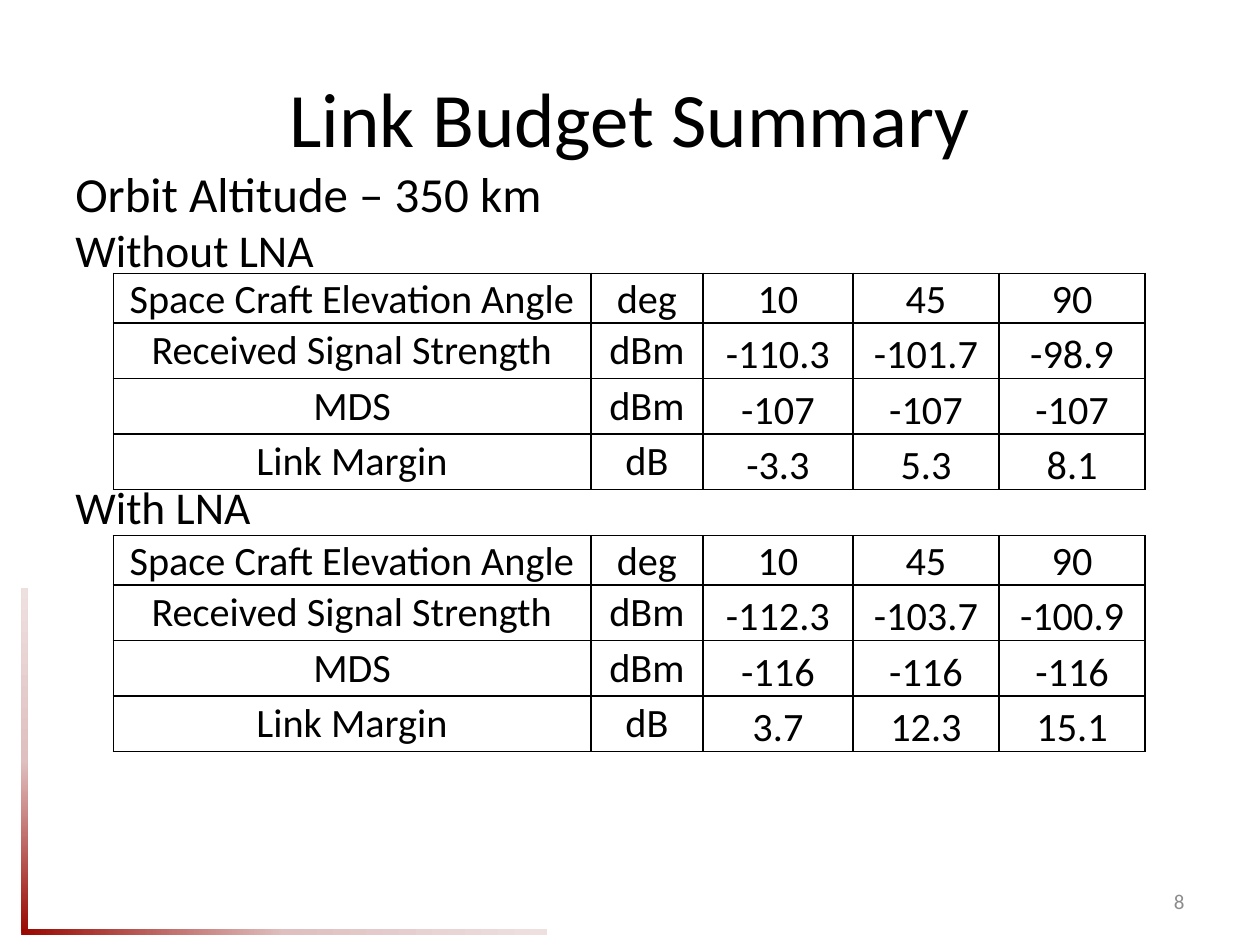
from dataclasses import dataclass

from pptx import Presentation
from pptx.dml.color import RGBColor
from pptx.enum.shapes import MSO_SHAPE
from pptx.enum.text import MSO_ANCHOR, PP_ALIGN
from pptx.oxml import parse_xml
from pptx.oxml.ns import nsdecls
from pptx.slide import Slide
from pptx.table import _Cell
from pptx.text.text import TextFrame
from pptx.util import Inches, Length, Pt


@dataclass(frozen=True)
class Theme:
    font: str = "Calibri"
    ink: str = "000000"
    muted: str = "8C8C8C"
    gradient: tuple = ((0, "990700"), (50, "DFBFBF"), (100, "EFE0E0"))
    title: int = 44
    body: int = 28
    label: int = 26
    table: int = 23
    number: int = 12
    border: int = 1


@dataclass(frozen=True)
class Box:
    """An area in columns and rows of the slide grid."""
    left: float
    top: float
    width: float
    height: float

    def lengths(self) -> tuple:
        return tuple(map(grid, (self.left, self.top, self.width, self.height)))


@dataclass(frozen=True)
class LinkBudget:
    top: float
    strength: tuple
    sensitivity: tuple
    margin: tuple

    def rows(self) -> list:
        return [
            ("Space Craft Elevation Angle", "deg", "10", "45", "90"),
            ("Received Signal Strength", "dBm", *self.strength),
            ("MDS", "dBm", *self.sensitivity),
            ("Link Margin", "dB", *self.margin),
        ]


THEME = Theme()
GRID_COLUMNS, GRID_ROWS = 40, 30
UNIT = 0.25  # inches per grid step
TABLE_LEFT, TABLE_HEIGHT, ROW_HEIGHT = 3.6, 6.88, 1.32
COLUMN_WIDTHS = (15.16, 3.56, 4.76, 4.64, 4.64)
BUDGETS = (
    LinkBudget(17, ("-112.3", "-103.7", "-100.9"), ("-116",) * 3, ("3.7", "12.3", "15.1")),
    LinkBudget(8.68, ("-110.3", "-101.7", "-98.9"), ("-107",) * 3, ("-3.3", "5.3", "8.1")),
)


def grid(steps: float) -> Length:
    return Inches(steps * UNIT)


def write_text(frame: TextFrame, text: str, *, size: int, color: str = THEME.ink,
               align: PP_ALIGN = PP_ALIGN.LEFT, anchor: MSO_ANCHOR = MSO_ANCHOR.TOP,
               line_spacing: float | None = None, space_after: float | None = None) -> None:
    frame.word_wrap = True
    frame.vertical_anchor = anchor
    paragraph = frame.paragraphs[0]
    paragraph.alignment = align
    if line_spacing is not None:
        paragraph.line_spacing = line_spacing
    if space_after is not None:
        paragraph.space_after = Pt(space_after)
    run = paragraph.add_run()
    run.text = text
    run.font.name = THEME.font
    run.font.size = Pt(size)
    run.font.color.rgb = RGBColor.from_string(color)


def add_label(slide: Slide, box: Box, text: str, **text_format) -> None:
    write_text(slide.shapes.add_textbox(*box.lengths()).text_frame, text, **text_format)


def add_gradient_bar(slide: Slide, box: Box, rotation: float = 0) -> None:
    shape = slide.shapes.add_shape(MSO_SHAPE.RECTANGLE, *box.lengths())
    shape.rotation = rotation
    stops = "".join(f'<a:gs pos="{position * 1000}"><a:srgbClr val="{color}"/></a:gs>'
                    for position, color in THEME.gradient)
    shape._element.spPr.append(parse_xml(
        f'<a:gradFill rotWithShape="1" {nsdecls("a")}><a:gsLst>{stops}</a:gsLst>'
        f'<a:lin ang="{270 * 60000}" scaled="0"/></a:gradFill>'))
    shape.line.fill.background()
    shape.shadow.inherit = False


def set_borders(cell: _Cell) -> None:
    properties = cell._tc.get_or_add_tcPr()
    for index, side in enumerate(("lnL", "lnR", "lnT", "lnB")):
        properties.insert(index, parse_xml(
            f'<a:{side} w="{Pt(THEME.border)}" {nsdecls("a")}><a:solidFill>'
            f'<a:srgbClr val="{THEME.ink}"/></a:solidFill></a:{side}>'))


def format_cell(cell: _Cell, text: str, is_header: bool, is_value: bool) -> None:
    side_margin = 0.01 if is_header else 0.07
    cell.margin_left = cell.margin_right = Inches(side_margin)
    cell.margin_top = Inches(0.01 if is_header else 0)
    cell.margin_bottom = 0
    cell.vertical_anchor = MSO_ANCHOR.BOTTOM if is_header or is_value else MSO_ANCHOR.MIDDLE
    spacing = {"line_spacing": 1.15, "space_after": 10} if is_value else {}
    write_text(cell.text_frame, text, size=THEME.table, align=PP_ALIGN.CENTER,
               anchor=cell.vertical_anchor, **spacing)
    cell.fill.background()
    set_borders(cell)


def add_budget_table(slide: Slide, budget: LinkBudget) -> None:
    rows = budget.rows()
    box = Box(TABLE_LEFT, budget.top, sum(COLUMN_WIDTHS), TABLE_HEIGHT)
    table = slide.shapes.add_table(len(rows), len(COLUMN_WIDTHS), *box.lengths()).table
    table.first_row = table.horz_banding = False
    for column, width in zip(table.columns, COLUMN_WIDTHS):
        column.width = grid(width)
    for row_index, texts in enumerate(rows):
        table.rows[row_index].height = grid(ROW_HEIGHT)
        for column_index, text in enumerate(texts):
            is_header = row_index == 0
            format_cell(table.cell(row_index, column_index), text, is_header,
                        is_value=not is_header and column_index >= 2)


def main() -> None:
    presentation = Presentation()
    presentation.slide_width = grid(GRID_COLUMNS)
    presentation.slide_height = grid(GRID_ROWS)
    slide = presentation.slides.add_slide(presentation.slide_layouts[6])

    # Corner bars
    add_gradient_bar(slide, Box(0.68, 18.68, 0.2, 11))
    add_gradient_bar(slide, Box(8.92, 21.24, 0.2, 16.68), rotation=90)

    # Heading
    add_label(slide, Box(2, 1.2, 36, 5), "Link Budget Summary", size=THEME.title,
              align=PP_ALIGN.CENTER, anchor=MSO_ANCHOR.MIDDLE)
    add_label(slide, Box(2, 5, 36, 3), "Orbit Altitude – 350 km", size=THEME.body)

    # Link budgets
    for budget in BUDGETS:
        add_budget_table(slide, budget)
    add_label(slide, Box(2, 15, 20, 2.16), "With LNA", size=THEME.label)
    add_label(slide, Box(2, 6.84, 18.32, 3.36), "Without LNA", size=THEME.label)

    # Slide number
    add_label(slide, Box(28.68, 27.8, 9.32, 1.6), "8", size=THEME.number,
              color=THEME.muted, align=PP_ALIGN.RIGHT, anchor=MSO_ANCHOR.MIDDLE)

    presentation.save("out.pptx")


if __name__ == "__main__":
    main()
